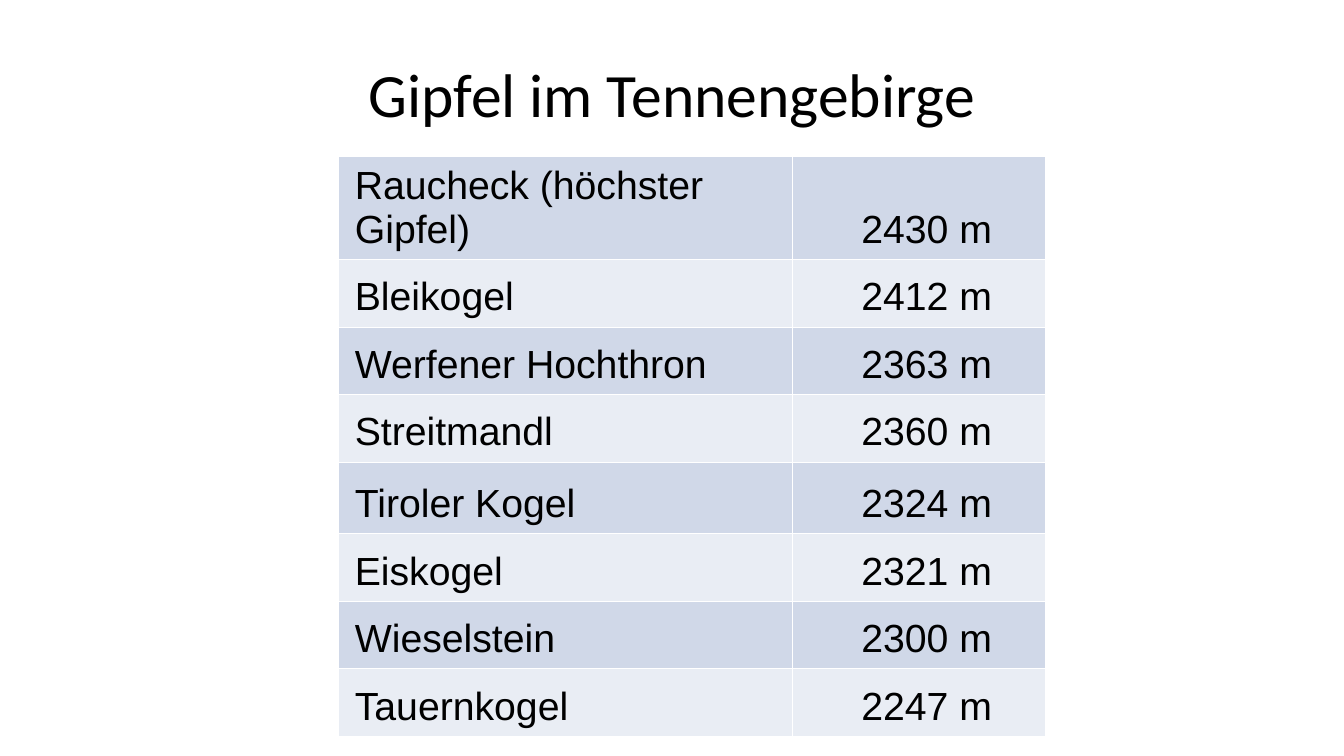
from lxml import etree
from pptx import Presentation
from pptx.dml.color import RGBColor
from pptx.enum.text import MSO_ANCHOR, PP_ALIGN
from pptx.oxml.ns import qn
from pptx.util import Inches, Pt

# Content
TITLE = "Gipfel im Tennengebirge"
PEAKS = [
    ("Raucheck (höchster Gipfel)", "2430 m"),
    ("Bleikogel", "2412 m"),
    ("Werfener Hochthron", "2363 m"),
    ("Streitmandl", "2360 m"),
    ("Tiroler Kogel", "2324 m"),
    ("Eiskogel", "2321 m"),
    ("Wieselstein", "2300 m"),
    ("Tauernkogel", "2247 m"),
]

# Layout and style
COLUMN_WIDTHS = (4.5, 2.51)
COLUMN_ALIGNMENTS = (PP_ALIGN.LEFT, PP_ALIGN.CENTER)
ROW_HEIGHT = 0.67
TALL_ROWS = {"Tiroler Kogel": 0.71}
BLACK = RGBColor(0x00, 0x00, 0x00)
WHITE = RGBColor(0xFF, 0xFF, 0xFF)
BANDS = (RGBColor(0xD0, 0xD8, 0xE8), RGBColor(0xE9, 0xED, 0xF4))
MIDDLE, BOTTOM = MSO_ANCHOR.MIDDLE, MSO_ANCHOR.BOTTOM


def write(frame, text, font_name, size, alignment):
    paragraph = frame.paragraphs[0]
    paragraph.alignment = alignment
    run = paragraph.add_run()
    run.text = text
    run.font.name = font_name
    run.font.size = Pt(size)
    run.font.color.rgb = BLACK


def add_borders(cell):
    properties = cell._tc.get_or_add_tcPr()
    for side in ("a:lnL", "a:lnR", "a:lnT", "a:lnB"):
        line = etree.SubElement(properties, qn(side), w=str(Pt(1)))
        fill = etree.SubElement(line, qn("a:solidFill"))
        etree.SubElement(fill, qn("a:srgbClr"), val=str(WHITE))


def format_cell(cell, text, alignment, band):
    add_borders(cell)
    cell.fill.solid()
    cell.fill.fore_color.rgb = band
    cell.vertical_anchor = BOTTOM
    cell.margin_left, cell.margin_right = Inches(0.16), Inches(0.01)
    cell.margin_top = cell.margin_bottom = Inches(0.08)
    write(cell.text_frame, text, "Arial", 28, alignment)


presentation = Presentation()
presentation.slide_width, presentation.slide_height = Inches(13.33), Inches(7.5)
slide = presentation.slides.add_slide(presentation.slide_layouts[5])

# Title
title = slide.shapes.title
title.left, title.top = Inches(0.67), Inches(0.3)
title.width, title.height = Inches(12), Inches(1.25)
title.text_frame.vertical_anchor = MIDDLE
write(title.text_frame, TITLE, "Calibri", 44, PP_ALIGN.CENTER)

# Table of peaks
heights = [TALL_ROWS.get(name, ROW_HEIGHT) for name, _ in PEAKS]
table = slide.shapes.add_table(
    len(PEAKS), len(COLUMN_WIDTHS), Inches(3.36), Inches(1.55),
    Inches(sum(COLUMN_WIDTHS)), Inches(sum(heights))).table
table.first_row = False
table.horz_banding = False
for column, width in zip(table.columns, COLUMN_WIDTHS):
    column.width = Inches(width)
for index, (row, height, peak) in enumerate(zip(table.rows, heights, PEAKS)):
    row.height = Inches(height)
    for cell, text, alignment in zip(row.cells, peak, COLUMN_ALIGNMENTS):
        format_cell(cell, text, alignment, BANDS[index % 2])

presentation.save("out.pptx")
